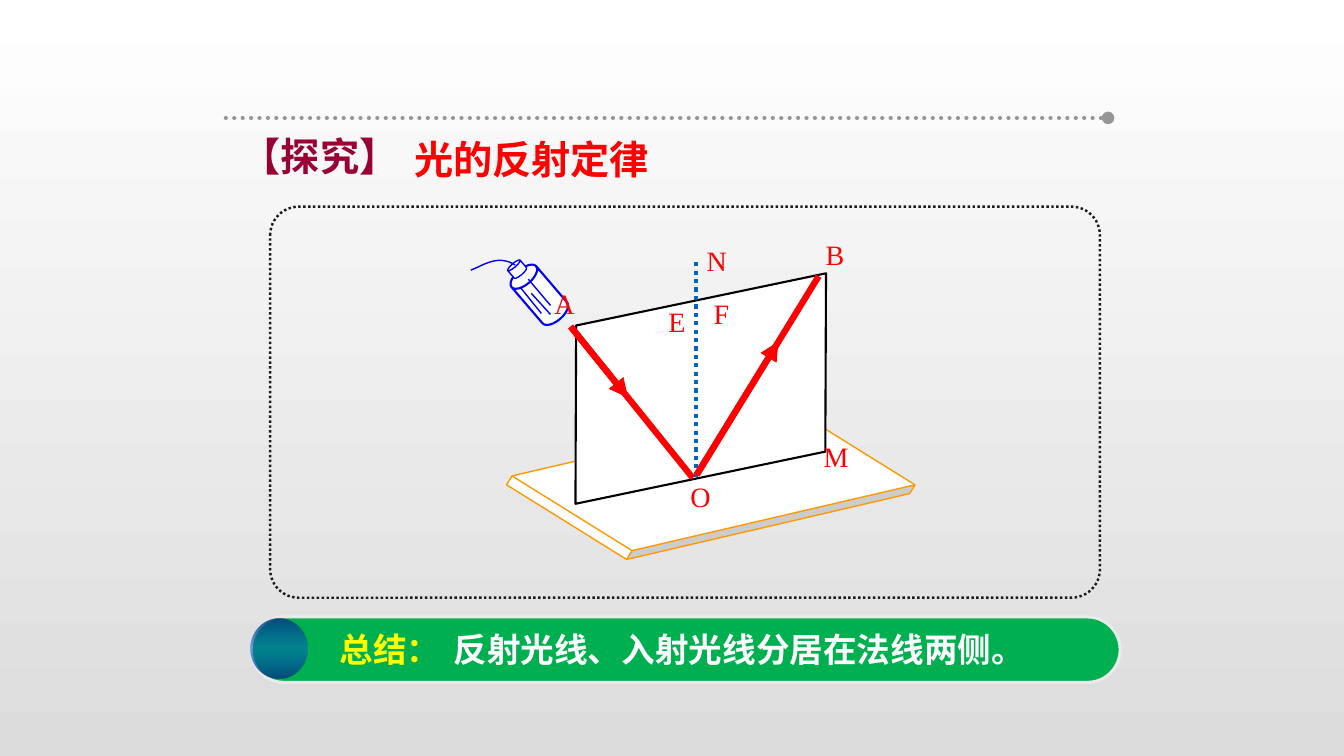
from dataclasses import dataclass

from lxml.etree import SubElement
from pptx import Presentation
from pptx.dml.color import RGBColor
from pptx.enum.dml import MSO_LINE
from pptx.enum.shapes import MSO_CONNECTOR, MSO_SHAPE
from pptx.enum.text import MSO_AUTO_SIZE
from pptx.oxml.ns import qn
from pptx.util import Inches, Pt

WHITE = RGBColor(0xFF, 0xFF, 0xFF)
SILVER = RGBColor(0xDC, 0xDC, 0xDC)
PALE = RGBColor(0xEA, 0xEA, 0xEA)
GREY = RGBColor(0x96, 0x96, 0x96)
CHARCOAL = RGBColor(0x1C, 0x1C, 0x1C)
BLACK = RGBColor(0, 0, 0)
MAROON = RGBColor(0x99, 0, 0x33)
RED = RGBColor(0xFF, 0, 0)
ORANGE = RGBColor(0xFF, 0x99, 0)
YELLOW = RGBColor(0xFF, 0xFF, 0)
GREEN = RGBColor(0, 0xB0, 0x50)
BLUE = RGBColor(0, 0, 0xFF)
STEEL = RGBColor(0x05, 0x63, 0xC1)
NAVY = RGBColor(0x03, 0x40, 0x7C)

CHINESE = "Noto Sans CJK SC"
LATIN = "Times New Roman"
CELL = 0.1  # inches per grid column and row


@dataclass
class Box:
    """A region of the slide, measured in grid columns and rows."""
    left: float
    top: float
    width: float
    height: float

    def point(self, column, row):
        return Inches((self.left + column) * CELL), Inches((self.top + row) * CELL)

    def area(self, column, row, width, height):
        return *self.point(column, row), Inches(width * CELL), Inches(height * CELL)


def style_line(line, color, width, dash=None):
    line.color.rgb = color
    line.width = Pt(width)
    if dash:
        line.dash_style = dash


def add_line(shapes, start, end, color, width, dash=None, tail=None, cap=None):
    connector = shapes.add_connector(MSO_CONNECTOR.STRAIGHT, *start, *end)
    style_line(connector.line, color, width, dash)
    outline = connector.element.find(".//" + qn("a:ln"))
    if cap:
        outline.set("cap", cap)
    if tail:
        SubElement(outline, qn("a:tailEnd"), type=tail)
    SubElement(connector.element.spPr, qn("a:effectLst"))


def add_figure(shapes, kind, area, fill=None, line=None, adjust=None, rotation=0):
    shape = shapes.add_shape(kind, *area)
    shape.shadow.inherit = False
    shape.rotation = rotation
    if adjust is not None:
        shape.adjustments[0] = adjust
    if fill is None:
        shape.fill.background()
    else:
        shape.fill.solid()
        shape.fill.fore_color.rgb = fill
    if line:
        style_line(shape.line, *line)
    else:
        shape.line.fill.background()
    return shape


def add_text(shapes, area, text, color, size, name=CHINESE, bold=True, wrap=True):
    frame = shapes.add_textbox(*area).text_frame
    frame.word_wrap = wrap
    frame.auto_size = MSO_AUTO_SIZE.SHAPE_TO_FIT_TEXT
    run = frame.paragraphs[0].add_run()
    run.text = text
    run.font.color.rgb = color
    for key, value in {"name": name, "size": Pt(size), "bold": bold}.items():
        setattr(run.font, key, value)
    SubElement(run.font._element, qn("a:ea"), typeface=name)


def fill_gradient(fill, element, stops):
    """Fill from top to bottom; stops are (percent, colour, opacity percent)."""
    fill.gradient()
    fill.gradient_angle = 270
    stop_list = next(element.iter(qn("a:gsLst")))
    for stop in list(stop_list):
        stop_list.remove(stop)
    for percent, color, opacity in stops:
        stop = SubElement(stop_list, qn("a:gs"), pos=str(percent * 1000))
        tint = SubElement(stop, qn("a:srgbClr"), val=str(color))
        if opacity < 100:
            SubElement(tint, qn("a:alpha"), val=str(opacity * 1000))


def add_header(shapes, box):
    add_line(shapes, box.point(0, 0), box.point(box.width, 0), GREY, 3,
             MSO_LINE.ROUND_DOT, "oval", "rnd")
    add_text(shapes, box.area(0.6, 0.9, 18.6, 5.7), "【探究】", MAROON, 28)
    add_text(shapes, box.area(17.7, 1.2, 41.3, 5.7), "光的反射定律", RED, 28)


def add_torch(shapes, box):
    for area, adjust, width in (((25.1, 5.6, 3.2, 6.3), 0.491, 1.5),
                                ((23.7, 5.5, 1.6, 1.4), 0.288, 1)):
        add_figure(shapes, MSO_SHAPE.CAN, box.area(*area), WHITE,
                   (BLUE, width), adjust, 319.4)
    for start, end in (((24.8, 8), (26.9, 10.6)), ((25.6, 7.2), (27.8, 9.8)),
                       ((25.9, 8.6), (27.8, 10.7))):
        add_line(shapes, box.point(*start), box.point(*end), BLUE, 1)

    controls = [box.point(*p) for p in ((24.3, 5.8), (22.6, 4.7), (21.2, 5.8), (19.9, 6.3))]
    curve = []
    for step in range(1, 17):
        t = step / 16
        weights = ((1 - t) ** 3, 3 * t * (1 - t) ** 2, 3 * t * t * (1 - t), t ** 3)
        curve.append(tuple(round(sum(w * c[axis] for w, c in zip(weights, controls)))
                           for axis in (0, 1)))
    builder = shapes.build_freeform(*controls[0])
    builder.add_line_segments(curve, close=False)
    cord = builder.convert_to_shape()
    cord.shadow.inherit = False
    cord.fill.background()
    style_line(cord.line, BLUE, 1)


def add_ray(shapes, box, start, end, share):
    """Draw a ray with an arrowhead at the given share of its length."""
    tip = [a + (b - a) * share for a, b in zip(start, end)]
    add_line(shapes, box.point(*start), box.point(*end), RED, 4.5)
    add_line(shapes, box.point(*start), box.point(*tip), RED, 4.5, tail="triangle")


def add_diagram(shapes, box):
    add_figure(shapes, MSO_SHAPE.ROUNDED_RECTANGLE, box.area(0, 0, box.width, box.height),
               line=(CHARCOAL, 1.75, MSO_LINE.ROUND_DOT), adjust=0.073)
    add_figure(shapes, MSO_SHAPE.CUBE, box.area(26.5, 16.9, 34.4, 21.4), WHITE,
               (ORANGE, 1), 0.952, 31.9)
    add_figure(shapes, MSO_SHAPE.PARALLELOGRAM, box.area(28.2, 9.4, 29, 17.3), WHITE,
               (BLACK, 1.5), 0.213, 348.2)
    add_line(shapes, box.point(42.2, 26.8), box.point(42.2, 5.5), STEEL, 3,
             MSO_LINE.ROUND_DOT)
    add_torch(shapes.add_group_shape().shapes, box)

    letters = shapes.add_group_shape().shapes
    for letter, column, row in (("A", 27.2, 7.4), ("E", 38.5, 9.2), ("F", 43, 8.4),
                                ("B", 54.1, 2.6), ("M", 53.9, 22.6),
                                ("O", 40.7, 26.6), ("N", 42.3, 3.2)):
        add_text(letters, box.area(column, row, 4, 4.3), letter, RED, 20,
                 LATIN, bold=False, wrap=False)

    for start, end, share in (((29.8, 11.9), (41.9, 26.9), 0.47),
                              ((42.3, 26.6), (54.4, 6.9), 0.67)):
        add_ray(shapes.add_group_shape().shapes, box, start, end, share)


def add_summary(shapes, box):
    banner = shapes.add_group_shape().shapes
    add_figure(banner, MSO_SHAPE.ROUNDED_RECTANGLE, box.area(0, 0, box.width, box.height),
               GREEN, (PALE, 2.25), 0.5)
    ball = add_figure(banner, MSO_SHAPE.OVAL, box.area(0, 0.2, 5.6, 5.9))
    fill_gradient(ball.fill, ball.element,
                  ((0, NAVY, 90), (50, STEEL, 55), (100, NAVY, 90)))
    add_text(shapes, box.area(19.1, 0.7, 62.3, 5), "反射光线、入射光线分居在法线两侧。", WHITE, 24)
    add_text(shapes, box.area(7.8, 0.7, 21.6, 5), "总结：", YELLOW, 24)


def main():
    presentation = Presentation()
    presentation.slide_width = Inches(13.33)
    presentation.slide_height = Inches(7.5)
    slide = presentation.slides.add_slide(presentation.slide_layouts[6])
    fill_gradient(slide.background.fill, slide.element,
                  ((0, WHITE, 100), (100, SILVER, 100)))
    add_header(slide.shapes, Box(22.4, 11.7, 87.5, 6.9))
    add_diagram(slide.shapes, Box(26.8, 20.5, 82.3, 38.8))
    add_summary(slide.shapes, Box(24.9, 61.2, 86.2, 6.5))
    presentation.save("out.pptx")


if __name__ == "__main__":
    main()
